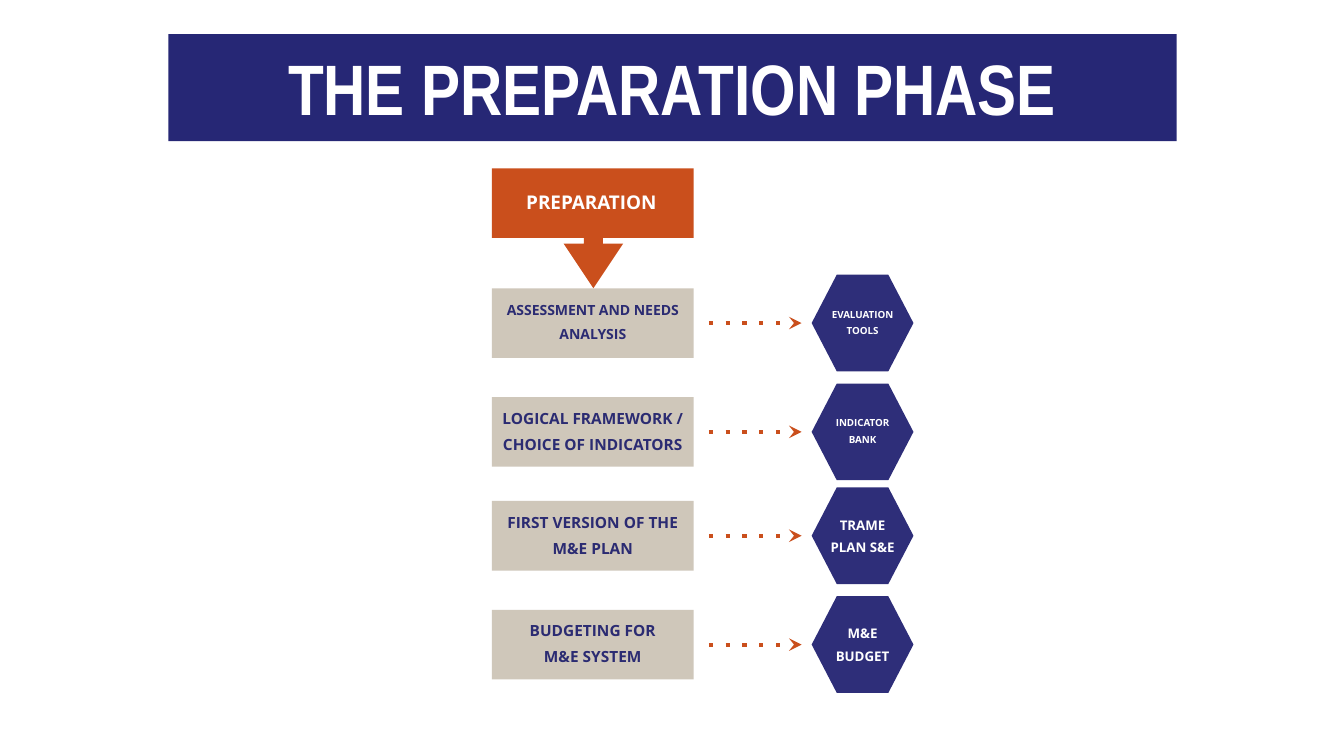
from lxml.etree import SubElement
from pptx import Presentation
from pptx.dml.color import RGBColor
from pptx.enum.shapes import MSO_CONNECTOR, MSO_SHAPE
from pptx.enum.text import MSO_ANCHOR, PP_ALIGN
from pptx.oxml.ns import qn
from pptx.util import Inches, Pt

COLORS = {
    "banner": "262775",
    "hexagon": "2E2E79",
    "step_text": "2B2B72",
    "step": "CFC7BA",
    "accent": "CA4F1C",
    "white": "FFFFFF",
}

BOX_LEFT, BOX_WIDTH, BOX_HEIGHT = 4.88, 2.0, 0.69
HEXAGON_LEFT, HEXAGON_WIDTH, HEXAGON_HEIGHT = 8.05, 1.01, 0.96
ARROW_START, ARROW_END = 7.03, 7.95

# top, step paragraphs, step size, tool (\v breaks the line), tool size
STEPS = [
    (2.86, ["ASSESSMENT AND NEEDS ANALYSIS"], 10, "EVALUATION\vTOOLS", 7),
    (3.94, ["LOGICAL FRAMEWORK / CHOICE OF INDICATORS"], 11, "INDICATOR\vBANK", 7),
    (4.97, ["FIRST VERSION OF THE", "M&E PLAN"], 11, "TRAME\vPLAN S&E", 9.5),
    (6.05, ["BUDGETING FOR", "M&E SYSTEM"], 11, "M&E\vBUDGET", 9.5),
]


def rgb(name):
    return RGBColor.from_string(COLORS[name])


def add_filled_shape(slide, kind, left, top, width, height, color):
    shape = slide.shapes.add_shape(
        kind, Inches(left), Inches(top), Inches(width), Inches(height))
    shape.shadow.inherit = False
    shape.fill.solid()
    shape.fill.fore_color.rgb = rgb(color)
    shape.line.fill.background()
    return shape


def write_text(shape, paragraphs, *, size, color="white", font="Open Sans",
               spacing=1.4, anchor=MSO_ANCHOR.MIDDLE, wrap=True,
               insets=(0.03, 0, 0.03, 0.09)):
    """Fill a shape with bold centred paragraphs; insets run left, top, right, bottom."""
    frame = shape.text_frame
    frame.word_wrap = wrap
    frame.vertical_anchor = anchor
    (frame.margin_left, frame.margin_top,
     frame.margin_right, frame.margin_bottom) = map(Inches, insets)
    for index, text in enumerate(paragraphs):
        paragraph = frame.add_paragraph() if index else frame.paragraphs[0]
        paragraph.text = text
        paragraph.alignment = PP_ALIGN.CENTER
        paragraph.line_spacing = spacing
        for run in paragraph.runs:
            run.font.name = font
            run.font.size = Pt(size)
            run.font.bold = True
            run.font.color.rgb = rgb(color)


def add_box(slide, top, paragraphs, fill, **text_format):
    box = add_filled_shape(slide, MSO_SHAPE.RECTANGLE, BOX_LEFT, top,
                           BOX_WIDTH, BOX_HEIGHT, fill)
    write_text(box, paragraphs, **text_format)


def add_hexagon(slide, middle, label, size):
    hexagon = add_filled_shape(slide, MSO_SHAPE.HEXAGON, HEXAGON_LEFT,
                               middle - HEXAGON_HEIGHT / 2, HEXAGON_WIDTH,
                               HEXAGON_HEIGHT, "hexagon")
    hexagon.adjustments[0] = 0.26
    write_text(hexagon, [label], size=size, wrap=False, insets=(0, 0, 0, 0.06))


def add_dotted_arrow(slide, middle):
    arrow = slide.shapes.add_connector(
        MSO_CONNECTOR.STRAIGHT, Inches(ARROW_START), Inches(middle),
        Inches(ARROW_END), Inches(middle))
    arrow.line.color.rgb = rgb("accent")
    arrow.line.width = Pt(3)
    properties = arrow._element.spPr
    outline = properties.find(qn("a:ln"))
    SubElement(outline, qn("a:prstDash"), val="dot")
    SubElement(outline, qn("a:tailEnd"), type="stealth")
    SubElement(properties, qn("a:effectLst"))


def add_down_arrow(slide):
    arrow = add_filled_shape(slide, MSO_SHAPE.DOWN_ARROW,
                             5.59, 1.71, 0.59, 1.15, "accent")
    arrow.adjustments[0] = 0.32
    arrow.adjustments[1] = 0.75


def add_banner(slide):
    banner = add_filled_shape(slide, MSO_SHAPE.RECTANGLE,
                              1.67, 0.34, 10, 1.06, "banner")
    write_text(banner, ["THE PREPARATION PHASE"], size=51, font="Arial Narrow",
               spacing=1.0, anchor=MSO_ANCHOR.TOP, insets=(0.1,) * 4)


def main():
    presentation = Presentation()
    presentation.slide_width = Inches(13.33)
    presentation.slide_height = Inches(7.5)
    slide = presentation.slides.add_slide(presentation.slide_layouts[6])

    add_banner(slide)
    add_down_arrow(slide)
    add_box(slide, 1.67, ["PREPARATION"], "accent", size=13.5,
            insets=(0.03, 0, 0.06, 0.12))
    for top, step, step_size, tool, tool_size in STEPS:
        middle = top + BOX_HEIGHT / 2
        add_box(slide, top, step, "step", size=step_size, color="step_text")
        add_dotted_arrow(slide, middle)
        add_hexagon(slide, middle, tool, tool_size)

    presentation.save("out.pptx")


if __name__ == "__main__":
    main()
